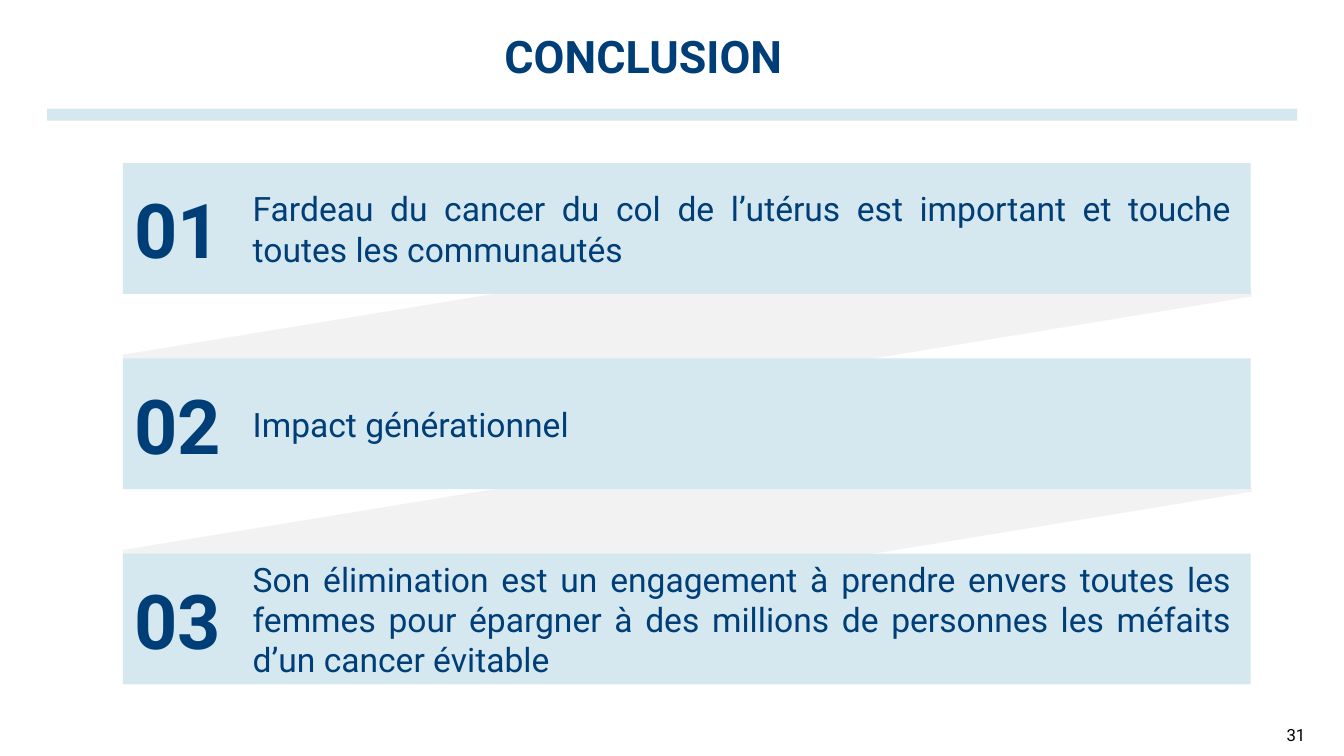
import pptx
import pptx.util
import pptx.dml.color
import pptx.enum.shapes
import pptx.enum.text
from dataclasses import dataclass

Cm = pptx.util.Cm
ALIGN = pptx.enum.text.PP_ALIGN
ANCHOR = pptx.enum.text.MSO_ANCHOR


@dataclass(frozen=True)
class Theme:
    font: str = "Roboto"
    navy: str = "003E78"
    pale: str = "D5E7EF"
    grey: str = "F2F2F2"
    black: str = "000000"
    title: int = 32
    number: int = 54
    body: int = 24
    page: int = 12


THEME = Theme()

POINTS = [
    "Fardeau du cancer du col de l’utérus est important et touche toutes les communautés",
    "Impact générationnel",
    "Son élimination est un engagement à prendre envers toutes les femmes pour épargner "
    "à des millions de personnes les méfaits d’un cancer évitable",
]

# Row grid, in centimetres
TOP, PITCH, HEIGHT = 4.11, 4.92, 3.3
LEFT, SPLIT, WIDTH = 3.1, 5.87, 25.65


def rgb(code):
    return pptx.dml.color.RGBColor.from_string(code)


def write(shape, text, size, align, color=THEME.navy, bold=False,
          anchor=ANCHOR.MIDDLE, inset=(0, 0)):
    frame = shape.text_frame
    frame.word_wrap = True
    frame.vertical_anchor = anchor
    frame.margin_left = frame.margin_right = Cm(inset[0])
    frame.margin_top = frame.margin_bottom = Cm(inset[1])
    frame.text = text
    para = frame.paragraphs[0]
    para.alignment = align
    font = para.runs[0].font
    font.name = THEME.font
    font.size = pptx.util.Pt(size)
    font.bold = bold
    font.color.rgb = rgb(color)


def block(slide, left, top, width, height, fill, angle=0):
    kind = pptx.enum.shapes.MSO_SHAPE.RECTANGLE
    shape = slide.shapes.add_shape(kind, Cm(left), Cm(top), Cm(width), Cm(height))
    shape.shadow.inherit = False
    shape.fill.solid()
    shape.fill.fore_color.rgb = rgb(fill)
    shape.line.fill.background()
    shape.rotation = angle
    return shape


def label(slide, left, top, width, height, text, size, **style):
    box = slide.shapes.add_textbox(Cm(left), Cm(top), Cm(width), Cm(height))
    write(box, text, size, ALIGN.CENTER, **style)


def row(slide, index, text):
    top = TOP + index * PITCH
    body = block(slide, SPLIT, top, WIDTH, HEIGHT, THEME.pale)
    write(body, text, THEME.body, ALIGN.JUSTIFY, inset=(0.5, 0.13))
    number = block(slide, LEFT, top, SPLIT - LEFT, HEIGHT, THEME.pale)
    write(number, f"{index + 1:02}", THEME.number, ALIGN.CENTER, bold=True)


def main():
    deck = pptx.Presentation()
    deck.slide_width, deck.slide_height = Cm(33.87), Cm(19.05)
    slide = deck.slides.add_slide(deck.slide_layouts[6])

    # Rule under the title and page number
    block(slide, 1.19, 2.74, 31.5, 0.3, THEME.pale)
    label(slide, 31.9, 18.08, 1.52, 0.86, "31", THEME.page, color=THEME.black)

    # Slanted bands that link one row to the next
    for gap in range(len(POINTS) - 1):
        block(slide, 3.16, 6.63 + gap * PITCH, 28.32, 3.15, THEME.grey, 350.7)

    # Title
    label(slide, 1.98, 0.38, 28.47, 1.7, "CONCLUSION", THEME.title,
          bold=True, anchor=ANCHOR.BOTTOM)

    # Numbered rows
    for index, text in enumerate(POINTS):
        row(slide, index, text)

    deck.save("out.pptx")


if __name__ == "__main__":
    main()
